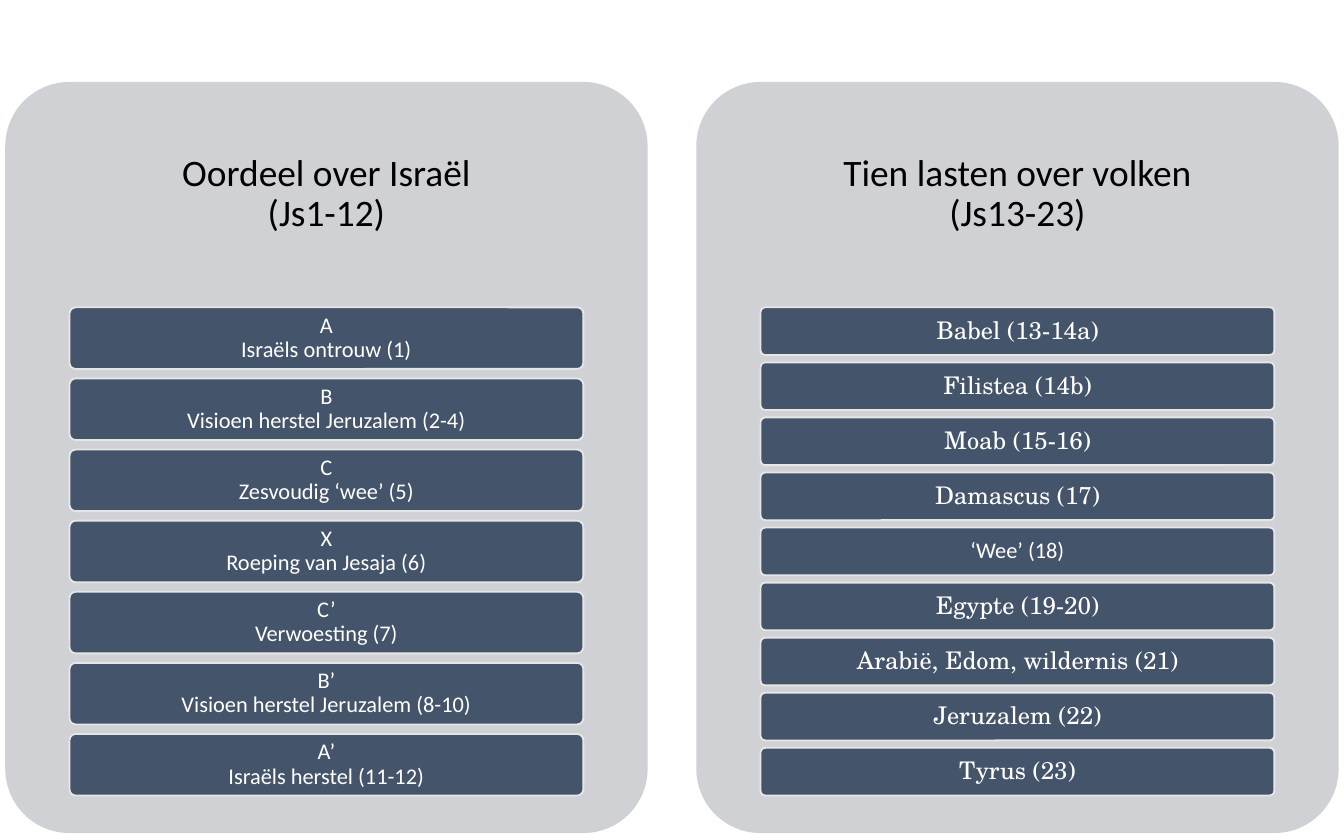
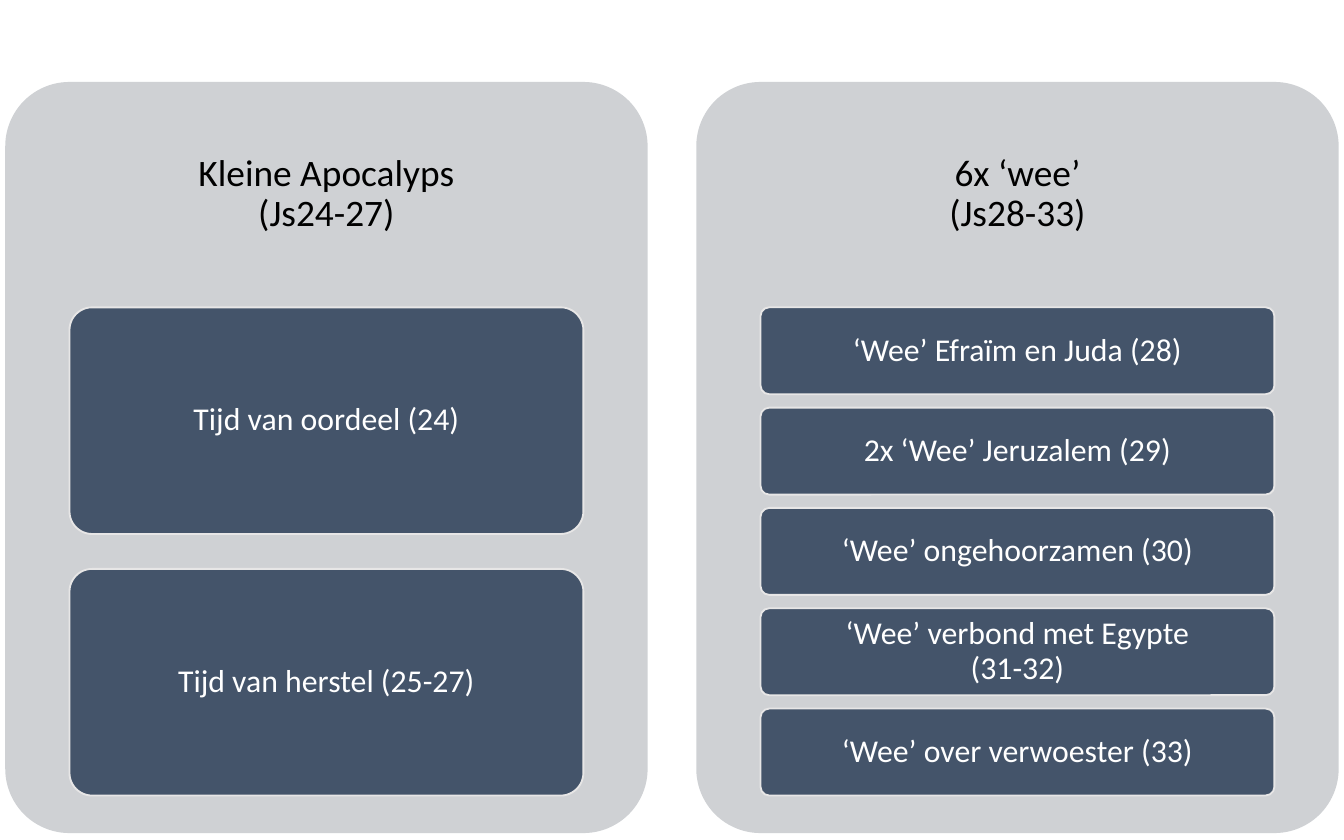
from pptx import Presentation
from pptx import util as u
from pptx.dml.color import RGBColor
from pptx.enum import shapes, text

HUES = {"panel": "CFD1D4", "bar": "44546A", "edge": "E7E6E6",
        "dark": "000000", "light": "FFFFFF"}
SANS, SERIF = "Calibri", "TeX Gyre Schola"
GAP = 1 / 6.5  # gap between bars, as a share of bar height

# Panels: left, top, width, height in cm
LEFT, TOP, WIDE, HIGH, STEP = 0.1, 1.55, 12.14, 14.2, 13.06

# Each panel: heading, font size, font, bars
# A bar is its text, or its text with its own size and font
SLIDES = [
    [
        ("Oordeel over Israël\n(Js1-12)", 12, SANS, [
            "A\nIsraëls ontrouw (1)",
            "B\nVisioen herstel Jeruzalem (2-4)",
            "C\nZesvoudig ‘wee’ (5)",
            "X\nRoeping van Jesaja (6)",
            "C’\nVerwoesting (7)",
            "B’\nVisioen herstel Jeruzalem (8-10)",
            "A’\nIsraëls herstel (11-12)",
        ]),
        ("Tien lasten over volken\n(Js13-23)", 13, SERIF, [
            "Babel (13-14a)",
            "Filistea (14b)",
            "Moab (15-16)",
            "Damascus (17)",
            ("‘Wee’ (18)", 12, SANS),
            "Egypte (19-20)",
            "Arabië, Edom, wildernis (21)",
            "Jeruzalem (22)",
            "Tyrus (23)",
        ]),
    ],
    [
        ("Kleine Apocalyps\n(Js24-27)", 17, SANS, [
            "Tijd van oordeel (24)",
            "Tijd van herstel (25-27)",
        ]),
        ("6x ‘wee’\n(Js28-33)", 17, SANS, [
            "‘Wee’ Efraïm en Juda (28)",
            "2x ‘Wee’ Jeruzalem (29)",
            "‘Wee’ ongehoorzamen (30)",
            "‘Wee’ verbond met Egypte\n(31-32)",
            "‘Wee’ over verwoester (33)",
        ]),
    ],
]


def hue(name):
    return RGBColor.from_string(HUES[name])


def write(shape, words, size, font, tint, pad):
    """Centre the words in the shape, one run per line."""
    frame = shape.text_frame
    frame.word_wrap = True
    frame.auto_size = text.MSO_AUTO_SIZE.NONE
    frame.vertical_anchor = text.MSO_ANCHOR.MIDDLE
    frame.margin_left = frame.margin_right = u.Cm(pad)
    frame.margin_top = frame.margin_bottom = u.Cm(pad)
    para = frame.paragraphs[0]
    para.alignment = text.PP_ALIGN.CENTER
    para.line_spacing = 0.9
    para.space_before = para.space_after = u.Pt(0)
    for num, line in enumerate(words.split("\n")):
        if num:
            para.add_line_break()
        run = para.add_run()
        run.text = line
        run.font.size = u.Pt(size)
        run.font.name = font
        run.font.bold = False
        run.font.color.rgb = hue(tint)


def block(slide, box, fill, edge=None):
    """Add a rounded rectangle."""
    shape = slide.shapes.add_shape(
        shapes.MSO_SHAPE.ROUNDED_RECTANGLE, *map(u.Cm, box))
    shape.adjustments[0] = 0.1
    shape.shadow.inherit = False
    shape.fill.solid()
    shape.fill.fore_color.rgb = hue(fill)
    if edge:
        shape.line.color.rgb = hue(edge)
        shape.line.width = u.Pt(1)
    else:
        shape.line.fill.background()
    return shape


def stack(slide, box, bars, size, font):
    """Fill the box with equal bars, one below the other."""
    left, top, wide, high = box
    count = len(bars)
    tall = high / (count + (count - 1) * GAP)
    for num, bar in enumerate(bars):
        words, pt, face = (bar, size, font) if isinstance(bar, str) else bar
        spot = (left, top + num * tall * (1 + GAP), wide, tall)
        write(block(slide, spot, "bar", "edge"), words, pt, face, "light", 0.08)


def panel(slide, box, head, title, size, font, bars):
    """Draw a grey panel with a heading over a stack of bars."""
    left, top, wide, high = box
    block(slide, box, "panel")
    # Heading, brought in front of the panel
    head.left, head.top = u.Cm(left), u.Cm(top)
    head.width, head.height = u.Cm(wide), u.Cm(0.3 * high)
    slide.shapes._spTree.append(head._element)
    write(head, title, 20, SANS, "dark", 0.2)
    # Bars
    area = (left + 0.1 * wide, top + 0.3 * high, 0.8 * wide, 0.65 * high)
    stack(slide, area, bars, size, font)


def build(deck, panels):
    """Add a slide with its panels side by side."""
    slide = deck.slides.add_slide(deck.slide_layouts.get_by_name("Comparison"))
    holds = {hold.placeholder_format.idx: hold for hold in slide.placeholders}
    heads = [holds.pop(1), holds.pop(3)]
    for hold in holds.values():
        slide.shapes._spTree.remove(hold._element)
    for num, (head, data) in enumerate(zip(heads, panels)):
        panel(slide, (LEFT + num * STEP, TOP, WIDE, HIGH), head, *data)


def main():
    deck = Presentation()
    deck.slide_width, deck.slide_height = u.Cm(25.4), u.Cm(15.88)
    for panels in SLIDES:
        build(deck, panels)
    deck.save("out.pptx")


if __name__ == "__main__":
    main()
